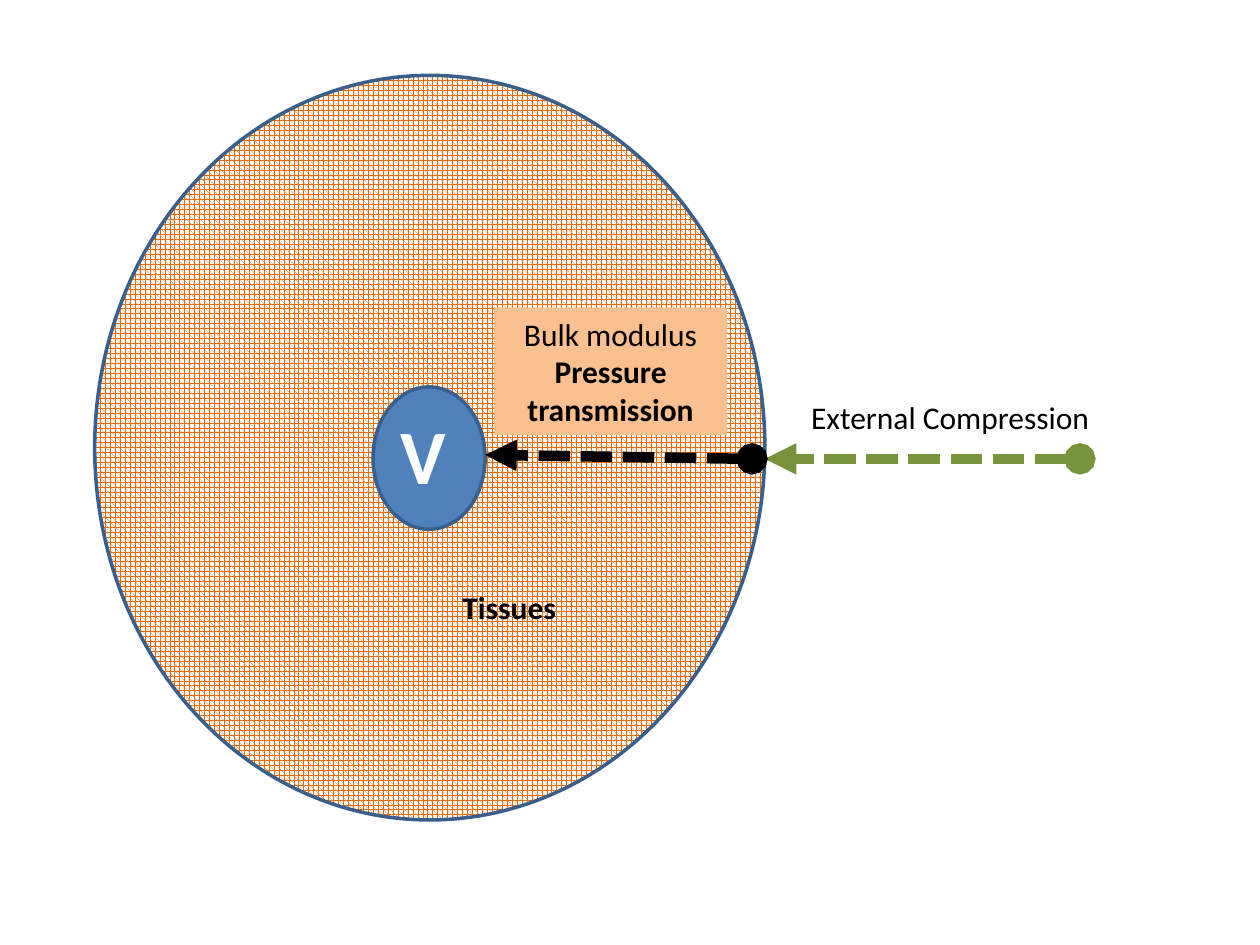
"""Build a slide showing how external compression reaches a vessel through tissue."""
from lxml.etree import SubElement
from pptx import Presentation
from pptx.dml.color import RGBColor
from pptx.enum.dml import MSO_LINE, MSO_PATTERN
from pptx.enum.shapes import MSO_CONNECTOR, MSO_SHAPE
from pptx.enum.text import MSO_AUTO_SIZE, PP_ALIGN
from pptx.oxml.ns import qn
from pptx.util import Cm, Pt


def colour(value):
    return RGBColor.from_string(value)


def write(box, text, size=18, bold=False, ink="000000", align=PP_ALIGN.LEFT, new=False):
    frame = box.text_frame
    frame.word_wrap = True
    frame.auto_size = MSO_AUTO_SIZE.SHAPE_TO_FIT_TEXT
    para = frame.add_paragraph() if new else frame.paragraphs[0]
    para.alignment = align
    span = para.add_run()
    span.text = text
    span.font.name = "Calibri"
    span.font.size = Pt(size)
    span.font.bold = bold
    span.font.color.rgb = colour(ink)


deck = Presentation()
deck.slide_width, deck.slide_height = Cm(25.4), Cm(19.05)
page = deck.slides.add_slide(deck.slide_layouts[6])
shapes = page.shapes

tissue = shapes.add_shape(MSO_SHAPE.OVAL, Cm(1.91), Cm(1.52), Cm(13.51), Cm(15.01))
tissue.fill.patterned()
tissue.fill.pattern = MSO_PATTERN.SPHERE
tissue.fill.fore_color.rgb = colour("E46C0A")
tissue.fill.back_color.rgb = colour("FFFFFF")

modulus = shapes.add_shape(MSO_SHAPE.RECTANGLE, Cm(9.96), Cm(6.2), Cm(4.7), Cm(2.57))
modulus.shadow.inherit = False
modulus.fill.solid()
modulus.fill.fore_color.rgb = colour("FAC090")
modulus.line.fill.background()
write(modulus, "Bulk modulus", align=PP_ALIGN.CENTER)
write(modulus, "Pressure transmission", bold=True, align=PP_ALIGN.CENTER, new=True)

vessel = shapes.add_shape(MSO_SHAPE.OVAL, Cm(7.52), Cm(7.8), Cm(2.26), Cm(2.87))
vessel.fill.solid()
vessel.fill.fore_color.rgb = colour("4F81BD")

for oval in (tissue, vessel):
    oval.shadow.inherit = False
    oval.line.color.rgb = colour("3A5F8C")
    oval.line.width = Pt(2)

for text, left, top, width, height, style in (
    ("External Compression", 16.1, 7.9, 7.49, 1.02, {}),
    ("V", 7.82, 8.1, 1.96, 2.13, {"size": 44, "bold": True, "ink": "FFFFFF"}),
    ("Tissues", 9.07, 11.73, 5.61, 1.02, {"bold": True}),
):
    label = shapes.add_textbox(Cm(left), Cm(top), Cm(width), Cm(height))
    write(label, text, **style)

for start_x, start_y, end_x, end_y, ink in (
    (21.77, 9.25, 15.42, 9.25, "77933C"),
    (15.16, 9.25, 9.78, 9.17, "000000"),
):
    arrow = shapes.add_connector(
        MSO_CONNECTOR.STRAIGHT, Cm(start_x), Cm(start_y), Cm(end_x), Cm(end_y)
    )
    arrow.line.color.rgb = colour(ink)
    arrow.line.width = Pt(6)
    arrow.line.dash_style = MSO_LINE.SQUARE_DOT
    stroke = arrow.line._get_or_add_ln()
    SubElement(stroke, qn("a:headEnd"), type="oval")
    SubElement(stroke, qn("a:tailEnd"), type="triangle")
    SubElement(stroke.getparent(), qn("a:effectLst"))

deck.save("out.pptx")
